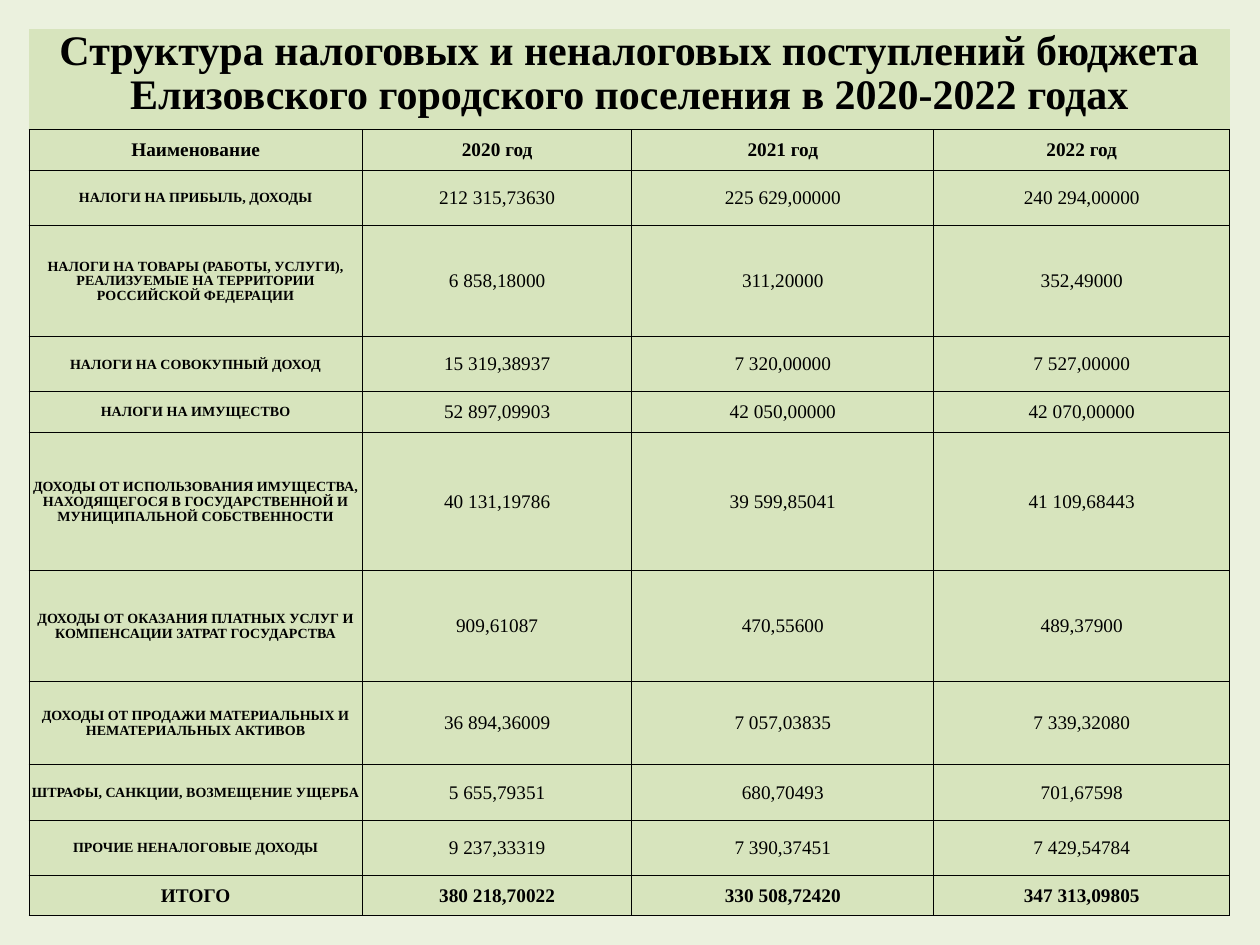
from lxml import etree
from pptx import Presentation
from pptx.dml.color import RGBColor
from pptx.enum.text import MSO_ANCHOR, PP_ALIGN
from pptx.oxml.ns import qn
from pptx.util import Inches, Pt

CENTER = PP_ALIGN.CENTER
TOP, MIDDLE = MSO_ANCHOR.TOP, MSO_ANCHOR.MIDDLE
BACKGROUND = RGBColor(0xEB, 0xF1, 0xDE)
CELL_GREEN = RGBColor(0xD7, 0xE4, 0xBD)
BLACK = RGBColor(0, 0, 0)
FONT = "Times New Roman"
SIDES = ("lnL", "lnR", "lnT", "lnB")

TITLE = ("Структура налоговых и неналоговых поступлений бюджета "
         "Елизовского городского поселения в 2020-2022 годах")
HEADER = ("Наименование", "2020 год", "2021 год", "2022 год")
INCOME = [
    ("НАЛОГИ НА ПРИБЫЛЬ, ДОХОДЫ",
     "212 315,73630", "225 629,00000", "240 294,00000"),
    ("НАЛОГИ НА ТОВАРЫ (РАБОТЫ, УСЛУГИ), РЕАЛИЗУЕМЫЕ НА ТЕРРИТОРИИ РОССИЙСКОЙ ФЕДЕРАЦИИ",
     "6 858,18000", "311,20000", "352,49000"),
    ("НАЛОГИ НА СОВОКУПНЫЙ ДОХОД",
     "15 319,38937", "7 320,00000", "7 527,00000"),
    ("НАЛОГИ НА ИМУЩЕСТВО",
     "52 897,09903", "42 050,00000", "42 070,00000"),
    ("ДОХОДЫ ОТ ИСПОЛЬЗОВАНИЯ ИМУЩЕСТВА, НАХОДЯЩЕГОСЯ В ГОСУДАРСТВЕННОЙ И "
     "МУНИЦИПАЛЬНОЙ СОБСТВЕННОСТИ",
     "40 131,19786", "39 599,85041", "41 109,68443"),
    ("ДОХОДЫ ОТ ОКАЗАНИЯ ПЛАТНЫХ УСЛУГ И КОМПЕНСАЦИИ ЗАТРАТ ГОСУДАРСТВА",
     "909,61087", "470,55600", "489,37900"),
    ("ДОХОДЫ ОТ ПРОДАЖИ МАТЕРИАЛЬНЫХ И НЕМАТЕРИАЛЬНЫХ АКТИВОВ",
     "36 894,36009", "7 057,03835", "7 339,32080"),
    ("ШТРАФЫ, САНКЦИИ, ВОЗМЕЩЕНИЕ УЩЕРБА",
     "5 655,79351", "680,70493", "701,67598"),
    ("ПРОЧИЕ НЕНАЛОГОВЫЕ ДОХОДЫ",
     "9 237,33319", "7 390,37451", "7 429,54784"),
]
TOTAL = ("ИТОГО", "380 218,70022", "330 508,72420", "347 313,09805")

COL_WIDTHS = (2.65, 2.14, 2.4, 2.35)
ROW_HEIGHTS = (0.8, 0.32, 0.44, 0.88, 0.44, 0.32, 1.1, 0.88, 0.66, 0.44, 0.44, 0.32)


def set_text(cell, text, size=11, bold=False, anchor=MIDDLE):
    cell.vertical_anchor = anchor
    cell.margin_left = cell.margin_right = cell.margin_top = Inches(0.01)
    cell.margin_bottom = 0
    p = cell.text_frame.paragraphs[0]
    p.alignment = CENTER
    p.line_spacing = 0.95
    r = p.add_run()
    r.text = text
    r.font.name = FONT
    r.font.size = Pt(size)
    r.font.bold = bold
    r.font.color.rgb = BLACK


def style_cell(cell, drawn_sides=SIDES):
    """Draw the given borders, clear the others, then fill the cell."""
    tc_pr = cell._tc.get_or_add_tcPr()
    for side in SIDES:
        ln = etree.SubElement(tc_pr, qn("a:" + side), w=str(Pt(0.5)))
        if side in drawn_sides:
            fill = etree.SubElement(ln, qn("a:solidFill"))
            etree.SubElement(fill, qn("a:srgbClr"), val=str(BLACK))
        else:
            etree.SubElement(ln, qn("a:noFill"))
    cell.fill.solid()
    cell.fill.fore_color.rgb = CELL_GREEN


def add_income_table(slide, left, top, width, height):
    table = slide.shapes.add_table(
        len(ROW_HEIGHTS), len(COL_WIDTHS), left, top, width, height).table
    table.first_row = table.horz_banding = False
    for col, share in zip(table.columns, COL_WIDTHS):
        col.width = int(width * share / sum(COL_WIDTHS))
    for row, share in zip(table.rows, ROW_HEIGHTS):
        row.height = int(height * share / sum(ROW_HEIGHTS))

    # Title row across all columns
    title = table.cell(0, 0)
    title.merge(table.cell(0, len(COL_WIDTHS) - 1))
    set_text(title, TITLE, size=24, bold=True, anchor=TOP)
    for cell in table.rows[0].cells:
        style_cell(cell, drawn_sides=("lnB",))

    # Header, income rows and total
    for i, values in enumerate([HEADER, *INCOME, TOTAL], start=1):
        is_income = values in INCOME
        for j, text in enumerate(values):
            cell = table.cell(i, j)
            is_label = is_income and j == 0
            set_text(cell, text, size=8 if is_label else 11,
                     bold=is_label or not is_income)
            style_cell(cell)


def main():
    prs = Presentation()
    prs.slide_width, prs.slide_height = Inches(10), Inches(7.5)
    s = prs.slides.add_slide(prs.slide_layouts[6])
    s.background.fill.solid()
    s.background.fill.fore_color.rgb = BACKGROUND
    add_income_table(s, Inches(0.23), Inches(0.23), Inches(9.53), Inches(7.04))
    prs.save("out.pptx")


if __name__ == "__main__":
    main()
